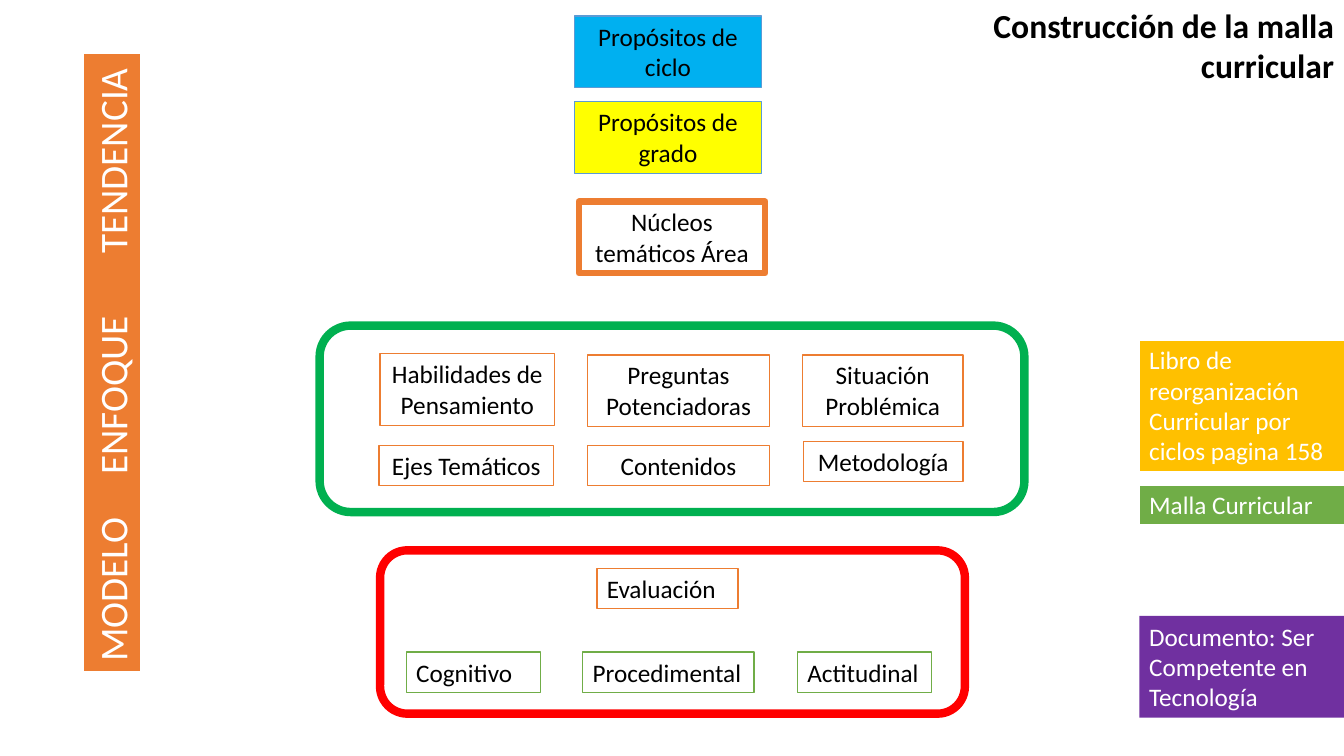
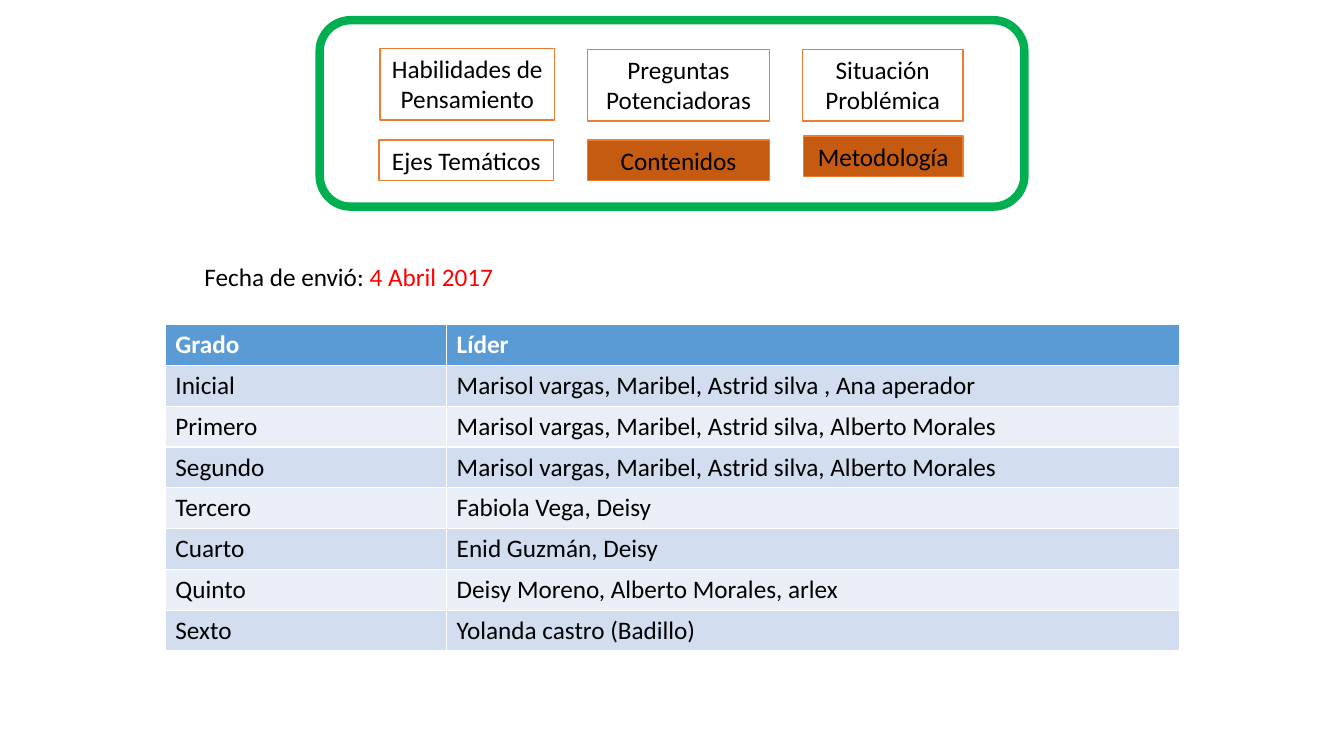
from lxml import etree
from pptx import Presentation
from pptx.dml.color import RGBColor
from pptx.enum import shapes, text
from pptx.oxml.ns import qn
from pptx.util import Inches, Pt

BLACK = RGBColor(0x00, 0x00, 0x00)
WHITE = RGBColor(0xFF, 0xFF, 0xFF)
RED = RGBColor(0xFF, 0x00, 0x00)
YELLOW = RGBColor(0xFF, 0xFF, 0x00)
SKY = RGBColor(0x00, 0xB0, 0xF0)
BLUE = RGBColor(0x5B, 0x9B, 0xD5)
BAND_DARK = RGBColor(0xD2, 0xDE, 0xEF)
BAND_LIGHT = RGBColor(0xEA, 0xEF, 0xF7)
ORANGE = RGBColor(0xED, 0x7D, 0x31)
RUST = RGBColor(0xC5, 0x5A, 0x11)
GOLD = RGBColor(0xFF, 0xC0, 0x00)
GREEN = RGBColor(0x70, 0xAD, 0x47)
FRAME_GREEN = RGBColor(0x00, 0xB0, 0x50)
PURPLE = RGBColor(0x70, 0x30, 0xA0)

FONT = "Calibri"
LEFT, CENTER, RIGHT = (text.PP_ALIGN.LEFT, text.PP_ALIGN.CENTER,
                       text.PP_ALIGN.RIGHT)
ONE_LINE, TWO_LINES = 0.4, 0.71

# text, left, top, fill, line colour, line width
PURPOSES = [
    ("Propósitos de ciclo", 5.7, 0.16, SKY, BLUE, 1),
    ("Propósitos de grado", 5.7, 1.01, YELLOW, BLUE, 1),
    ("Núcleos temáticos Área", 5.74, 2, WHITE, ORANGE, 4.5),
]
# text, left, offset from the frame's top, width, height
COMPONENTS = [
    ("Habilidades de Pensamiento", 3.77, 0.28, 1.73, TWO_LINES),
    ("Preguntas Potenciadoras", 5.83, 0.29, 1.8, TWO_LINES),
    ("Situación Problémica", 7.96, 0.29, 1.59, TWO_LINES),
    ("Ejes Temáticos", 3.76, 1.19, 1.73, ONE_LINE),
    ("Contenidos", 5.83, 1.19, 1.8, ONE_LINE),
    ("Metodología", 7.97, 1.15, 1.58, ONE_LINE),
]
# text, left, top, width, line colour
EVALUATION = [
    ("Evaluación", 5.92, 5.64, 1.4, ORANGE),
    ("Cognitivo", 4.03, 6.47, 1.33, GREEN),
    ("Procedimental", 5.78, 6.47, 1.7, GREEN),
    ("Actitudinal", 7.91, 6.47, 1.33, GREEN),
]
# text, top, height, fill, line colour
SOURCES = [
    ("Libro de reorganización Curricular por ciclos pagina 158",
     3.37, 1.31, GOLD, WHITE),
    ("Malla Curricular", 4.81, ONE_LINE, GREEN, WHITE),
    ("Documento: Ser Competente en Tecnología", 6.11, 1.01, PURPLE, None),
]
FOUNDATIONS = ["MODELO", "ENFOQUE", "TENDENCIA"]
FOUNDATION_TABS = [1.86, 4.05]
LEADERS = [
    ("Grado", "Líder"),
    ("Inicial", "Marisol vargas, Maribel, Astrid silva , Ana aperador"),
    ("Primero", "Marisol vargas, Maribel, Astrid silva, Alberto Morales"),
    ("Segundo", "Marisol vargas, Maribel, Astrid silva, Alberto Morales"),
    ("Tercero", "Fabiola Vega, Deisy"),
    ("Cuarto", "Enid Guzmán, Deisy"),
    ("Quinto", "Deisy Moreno, Alberto Morales, arlex"),
    ("Sexto", "Yolanda castro (Badillo)"),
]
LEADER_COLUMNS = [2.79, 7.27]


def style_paragraph(paragraph, color=BLACK, size=18, bold=False, align=LEFT):
    paragraph.alignment = align
    font = paragraph.font
    font.name, font.size, font.bold = FONT, Pt(size), bold
    font.color.rgb = color


def add_outline(slide, preset, at, fill, line, width):
    """Add a preset shape; a fill or line of None is left out."""
    shape = slide.shapes.add_shape(preset, *map(Inches, at))
    shape.shadow.inherit = False
    if fill is None:
        shape.fill.background()
    else:
        shape.fill.solid()
        shape.fill.fore_color.rgb = fill
    if line is None:
        shape.line.fill.background()
    else:
        shape.line.color.rgb = line
        shape.line.width = Pt(width)
    return shape


def add_box(slide, label, at, fill=WHITE, line=ORANGE, width=1, **style):
    box = add_outline(slide, shapes.MSO_SHAPE.RECTANGLE, at, fill, line, width)
    frame = box.text_frame
    frame.word_wrap = True
    frame.vertical_anchor = text.MSO_ANCHOR.TOP
    frame.auto_size = text.MSO_AUTO_SIZE.SHAPE_TO_FIT_TEXT
    frame.text = label
    style_paragraph(frame.paragraphs[0], **style)
    return box


def add_frame(slide, at, color):
    add_outline(slide, shapes.MSO_SHAPE.ROUNDED_RECTANGLE, at, None, color, 6)


def add_text(slide, at, runs, **style):
    """Add a one-paragraph text box from (text, colour or None) runs."""
    frame = slide.shapes.add_textbox(*map(Inches, at)).text_frame
    frame.word_wrap = True
    paragraph = frame.paragraphs[0]
    style_paragraph(paragraph, **style)
    for words, color in runs:
        run = paragraph.add_run()
        run.text = words
        if color is not None:
            run.font.color.rgb = color


def add_components(slide, top, highlighted=()):
    for label, left, offset, width, height in COMPONENTS:
        add_box(slide, label, (left, top + offset, width, height),
                RUST if label in highlighted else WHITE, align=CENTER)
    add_frame(slide, (3.17, top, 6.99, 1.85), FRAME_GREEN)


def add_foundations(slide):
    band = add_box(slide, "\t".join(FOUNDATIONS), (-1.96, 3.31, 6.14, 0.57),
                   ORANGE, WHITE, 1.5, color=WHITE, size=28)
    band.rotation = 270
    properties = band.text_frame.paragraphs[0].font._element.getparent()
    tabs = etree.Element(qn("a:tabLst"))
    for position in FOUNDATION_TABS:
        etree.SubElement(tabs, qn("a:tab"), pos=str(Inches(position)), algn="l")
    properties.insert(0, tabs)


def add_leaders(slide):
    table = slide.shapes.add_table(
        len(LEADERS), len(LEADER_COLUMNS), Inches(1.64), Inches(3.22),
        Inches(sum(LEADER_COLUMNS)), Inches(3.24)).table
    for column, width in zip(table.columns, LEADER_COLUMNS):
        column.width = Inches(width)
    for r, row in enumerate(LEADERS):
        header = r == 0
        fill = BLUE if header else BAND_DARK if r % 2 else BAND_LIGHT
        for c, words in enumerate(row):
            cell = table.cell(r, c)
            cell.fill.solid()
            cell.fill.fore_color.rgb = fill
            cell.text = words
            style_paragraph(cell.text_frame.paragraphs[0],
                            WHITE if header else BLACK, bold=header)


def build_map(slide):
    for label, left, top, fill, line, width in PURPOSES:
        add_box(slide, label, (left, top, 1.85, TWO_LINES), fill, line, width,
                align=CENTER)
    add_components(slide, 3.23)
    for label, left, top, width, line in EVALUATION:
        add_box(slide, label, (left, top, width, ONE_LINE), line=line)
    add_frame(slide, (3.77, 5.46, 5.8, 1.62), RED)
    add_foundations(slide)
    for label, top, height, fill, line in SOURCES:
        add_box(slide, label, (11.3, top, 2.04, height), fill, line, 1.5,
                color=WHITE)
    add_text(slide, (8.85, 0, 4.48, 0.91),
             [("Construcción de la malla curricular", None)],
             size=24, bold=True, align=RIGHT)


def build_schedule(slide):
    add_components(slide, 0.2, ("Contenidos", "Metodología"))
    add_leaders(slide)
    add_text(slide, (1.93, 2.54, 8.77, ONE_LINE),
             [("Fecha de envió: ", None), ("4 Abril 2017", RED)])


def main():
    deck = Presentation()
    deck.slide_width, deck.slide_height = Inches(13.33), Inches(7.5)
    for build in (build_map, build_schedule):
        build(deck.slides.add_slide(deck.slide_layouts[6]))
    deck.save("out.pptx")


if __name__ == "__main__":
    main()
